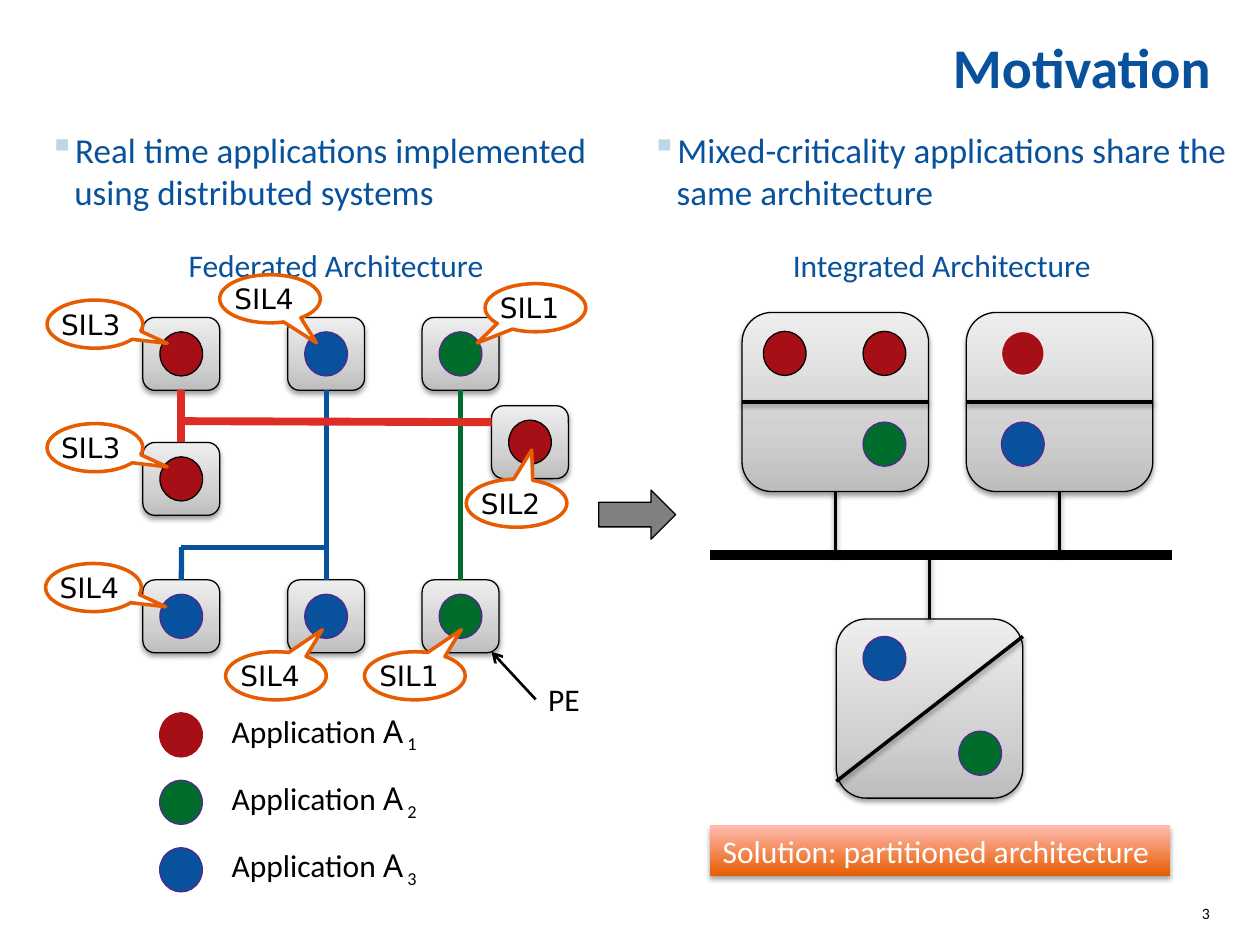
from copy import deepcopy
from dataclasses import dataclass

from lxml.etree import SubElement
from pptx import Presentation
from pptx.dml.color import RGBColor
from pptx.enum.shapes import MSO_CONNECTOR, MSO_SHAPE as Preset
from pptx.enum.text import MSO_ANCHOR as Anchor, PP_ALIGN as Align
from pptx.oxml.ns import qn
from pptx.util import Cm, Pt

COLORS = {
    "blue": "08519C", "red": "A50F15", "green": "006D2C", "bus_red": "DE2D26",
    "purple": "54278F", "black": "000000", "white": "FFFFFF", "pale": "EDEDED",
    "bullet": "BDD7E7", "arrow": "808080", "orange": "E75C00", "peach": "FFBCB1",
    "metal_dark": "BDBDBD", "metal_mid": "D1D1D1", "metal_light": "EEEEEE",
}
METAL = [(0, "metal_dark"), (0.35, "metal_mid"), (1, "metal_light")]
APP_OUTLINES = {"red": "black", "blue": "purple", "green": "purple"}
APP_W, APP_H = 0.86, 0.89
TOP, LEFT, BOTTOM, RIGHT = range(4)


@dataclass
class Box:
    left: float
    top: float
    width: float
    height: float

    def inner(self, x, y, width, height):
        return Box(self.left + x, self.top + y, width, height)

    def emu(self):
        return Cm(self.left), Cm(self.top), Cm(self.width), Cm(self.height)


def rgb(name):
    return RGBColor.from_string(COLORS[name])


def style_font(font, size, color, name="Calibri", bold=False):
    font.size, font.name, font.bold = Pt(size), name, bold
    font.color.rgb = rgb(color)


def add_text(slide, box, text, size, color, align=Align.LEFT, inset=None, wrap=True, bold=False):
    frame = slide.shapes.add_textbox(*box.emu()).text_frame
    frame.word_wrap = wrap
    if inset is not None:
        set_insets(frame, inset)
    paragraph = frame.paragraphs[0]
    paragraph.text, paragraph.alignment = text, align
    style_font(paragraph.font, size, color, bold=bold)
    return frame


def set_insets(frame, inset):
    frame.margin_left = frame.margin_right = frame.margin_top = frame.margin_bottom = Cm(inset)


def cast_shadow(effects, alpha=38, distance=1.6):
    shadow = SubElement(effects, qn("a:outerShdw"), blurRad=str(Pt(3.1)),
                        dist=str(Pt(distance)), dir="5400000", rotWithShape="0")
    color = SubElement(shadow, qn("a:srgbClr"), val=COLORS["black"])
    SubElement(color, qn("a:alpha"), val=str(alpha * 1000))


def add_shape(slide, preset, box, fill, outline="black", width=0.75):
    shape = slide.shapes.add_shape(preset, *box.emu())
    if isinstance(fill, str):
        shape.fill.solid()
        shape.fill.fore_color.rgb = rgb(fill)
    else:
        apply_gradient(shape, fill)
    if outline:
        shape.line.color.rgb = rgb(outline)
        shape.line.width = Pt(width)
    else:
        shape.line.fill.background()
    shape.shadow.inherit = False
    return shape


def apply_gradient(shape, stops):
    shape.fill.gradient()
    shape.fill.gradient_angle = 90
    stop_list = shape._element.spPr.find(".//" + qn("a:gsLst"))
    for _ in stops[2:]:
        stop_list.append(deepcopy(stop_list[0]))
    for stop, (position, color) in zip(shape.fill.gradient_stops, stops):
        stop.position = position
        stop.color.rgb = rgb(color)


def add_element(slide, box):
    element = add_shape(slide, Preset.ROUNDED_RECTANGLE, box, METAL)
    cast_shadow(element._element.spPr.find(qn("a:effectLst")))
    return element


def add_app(slide, box, x, y, color, outline=None):
    add_shape(slide, Preset.OVAL, box.inner(x, y, APP_W, APP_H), color,
              outline or APP_OUTLINES[color])


def add_line(slide, box, start, end, color, width, begin=None, finish=None, shadow=False):
    points = [Cm(v) for x, y in (start, end) for v in (box.left + x, box.top + y)]
    line = slide.shapes.add_connector(MSO_CONNECTOR.STRAIGHT, *points)
    if begin:
        line.begin_connect(*begin)
    if finish:
        line.end_connect(*finish)
    line.line.color.rgb = rgb(color)
    line.line.width = Pt(width)
    effects = SubElement(line._element.spPr, qn("a:effectLst"))
    if shadow:
        cast_shadow(effects)
    return line


def add_header(slide, box):
    frame = add_text(slide, box, "Motivation", 32, "blue", Align.RIGHT, 0, bold=True)
    frame.vertical_anchor = Anchor.BOTTOM
    frame.paragraphs[0].line_spacing = 0.8


def add_statement(slide, box, text):
    paragraph = add_text(slide, box, text, 20, "blue", inset=0).paragraphs[0]
    paragraph.space_before = Pt(5)
    properties = paragraph._p.get_or_add_pPr()
    properties.set("marL", str(Cm(0.51)))
    properties.set("indent", str(Cm(-0.61)))
    bullet_color = properties.makeelement(qn("a:buClr"), {})
    SubElement(bullet_color, qn("a:srgbClr"), val=COLORS["bullet"])
    bullet = properties.makeelement(qn("a:buChar"), {"char": "▪"})
    defaults = properties.find(qn("a:defRPr"))
    defaults.addprevious(bullet_color)
    defaults.addprevious(bullet)


def add_callout(slide, box, text, tip):
    callout = add_shape(slide, Preset.OVAL_CALLOUT, box, "white", "orange", 2)
    callout.adjustments[0], callout.adjustments[1] = tip
    frame = callout.text_frame
    set_insets(frame, 0)
    frame.vertical_anchor = Anchor.MIDDLE
    paragraph = frame.paragraphs[0]
    paragraph.text, paragraph.alignment = text, Align.LEFT
    style_font(paragraph.font, 16, "black", "DejaVu Sans")


def add_federated(slide, box):
    add_text(slide, box.inner(0, 0, box.width, 1.02), "Federated Architecture", 18, "blue",
             Align.CENTER)
    node_w, node_h = 1.55, 1.47
    nodes = {
        "top_left": (1.96, 1.57, "red"), "top_mid": (4.88, 1.57, "blue"),
        "top_right": (7.59, 1.57, "green"), "side": (8.99, 3.35, "red"),
        "mid_left": (1.96, 4.09, "red"), "low_left": (1.96, 6.86, "blue"),
        "low_mid": (4.88, 6.86, "blue"), "low_right": (7.59, 6.86, "green"),
    }
    pe = {key: add_element(slide, box.inner(x, y, node_w, node_h))
          for key, (x, y, _) in nodes.items()}
    for upper, lower, color, width in [("top_mid", "low_mid", "blue", 3),
                                       ("top_right", "low_right", "green", 3),
                                       ("top_left", "mid_left", "bus_red", 4.5)]:
        add_line(slide, box, (0, 0), (0, 0), color, width, (pe[upper], BOTTOM), (pe[lower], TOP))
    add_line(slide, box, (2.74, 6.2), (2.74, 6.86), "blue", 3, finish=(pe["low_left"], TOP))
    add_line(slide, box, (5.66, 6.2), (2.72, 6.2), "blue", 3)
    add_line(slide, box, (2.79, 3.66), (8.99, 3.68), "bus_red", 4.5)
    for x, y, color in nodes.values():
        add_app(slide, box, x + (node_w - APP_W) / 2, y + (node_h - APP_H) / 2, color)
    pointer = add_line(slide, box, (9.88, 9.27), (8.99, 8.31), "black", 1.5)
    SubElement(pointer.line._get_or_add_ln(), qn("a:tailEnd"), type="arrow")
    add_text(slide, box.inner(9.88, 8.76, 1.17, 1.02), "PE", 18, "black", wrap=False)
    side_tip, low_tip = (0.755, 0.401), (0.461, -0.96)
    for x, y, width, level, tip in [
        (0.03, 1.22, 1.93, 3, side_tip), (0.03, 3.71, 1.93, 3, side_tip),
        (0, 6.53, 1.93, 4, side_tip), (3.51, 0.71, 2.03, 4, (0.461, 0.916)),
        (3.63, 8.31, 2.03, 4, low_tip), (6.43, 8.31, 2.03, 1, low_tip),
        (8.48, 4.83, 2.03, 2, (0.15, -1.107)), (8.86, 0.89, 2.03, 1, (-0.577, 0.732)),
    ]:
        add_callout(slide, box.inner(x, y, width, 0.97), f"SIL{level}", tip)


def add_legend(slide, box):
    row_height = box.height / 3
    for row, (color, outline) in enumerate([("red", "red"), ("green", None), ("blue", None)]):
        y = row * row_height
        add_app(slide, box, 0.02, y + 0.15, color, outline)
        paragraph = add_text(slide, box.inner(1.22, y, 4.55, 1.02), "Application ", 18, "black",
                             wrap=False).paragraphs[0]
        letter, index = paragraph.add_run(), paragraph.add_run()
        letter.text, index.text = "A", f" {row + 1}"
        letter.font.name = "Noto Sans"
        index._r.get_or_add_rPr().set("baseline", "-25000")


def add_integrated(slide, box):
    add_text(slide, box.inner(0, 0, box.width, 1.02), "Integrated Architecture", 18, "blue",
             Align.CENTER)
    left, right, lower = [add_element(slide, box.inner(x, y, 3.76, 3.61))
                          for x, y in [(1.83, 1.47), (6.35, 1.47), (3.73, 7.65)]]
    bus_y = 6.35
    for module, x, side in [(left, 3.71, BOTTOM), (right, 8.23, BOTTOM), (lower, 5.61, TOP)]:
        add_line(slide, box, (x, bus_y), (x, bus_y), "black", 2, finish=(module, side), shadow=True)
    add_line(slide, box, (1.19, bus_y), (10.49, bus_y), "black", 5.75)
    for x, y, color, outline in [
        (2.26, 1.85, "red", None), (4.27, 1.85, "red", None), (7.06, 1.85, "red", "pale"),
        (7.06, 3.68, "blue", None), (4.27, 8, "blue", None),
        (4.27, 3.68, "green", None), (6.2, 9.91, "green", None),
    ]:
        add_app(slide, box, x, y, color, outline)
    for module in (left, right):
        add_line(slide, box, (0, 0), (0, 0), "black", 2, (module, LEFT), (module, RIGHT), True)
    add_line(slide, box, (3.73, 10.92), (7.49, 8), "black", 2, shadow=True)


def add_solution(slide, box):
    banner = add_shape(slide, Preset.RECTANGLE, box, [(0, "orange"), (1, "peach")], None)
    cast_shadow(banner._element.spPr.find(qn("a:effectLst")), 35, 1.8)
    paragraph = banner.text_frame.paragraphs[0]
    paragraph.text, paragraph.alignment = "Solution: partitioned architecture", Align.LEFT
    style_font(paragraph.font, 18, "white")


def main():
    deck = Presentation()
    deck.slide_width, deck.slide_height = Cm(25.4), Cm(19.05)
    slide = deck.slides.add_slide(deck.slide_layouts[6])
    add_header(slide, Box(0.99, 0, 23.42, 2.01))
    add_statement(slide, Box(0.99, 2.59, 11.71, 1.78),
                  "Real time applications implemented using distributed systems")
    add_statement(slide, Box(13.13, 2.59, 11.71, 1.78),
                  "Mixed-criticality applications share the same architecture")
    add_federated(slide, Box(0.92, 4.83, 11.71, 9.8))
    add_legend(slide, Box(3.2, 14.22, 5.77, 4.08))
    add_shape(slide, Preset.RIGHT_ARROW, Box(12.07, 9.88, 1.55, 0.99), "arrow")
    add_integrated(slide, Box(13.13, 4.83, 11.71, 11.26))
    add_solution(slide, Box(14.32, 16.64, 9.27, 1.02))
    add_text(slide, Box(23.55, 18.21, 0.84, 0.84), "3", 9, "black", Align.RIGHT, 0)
    deck.save("out.pptx")


if __name__ == "__main__":
    main()
